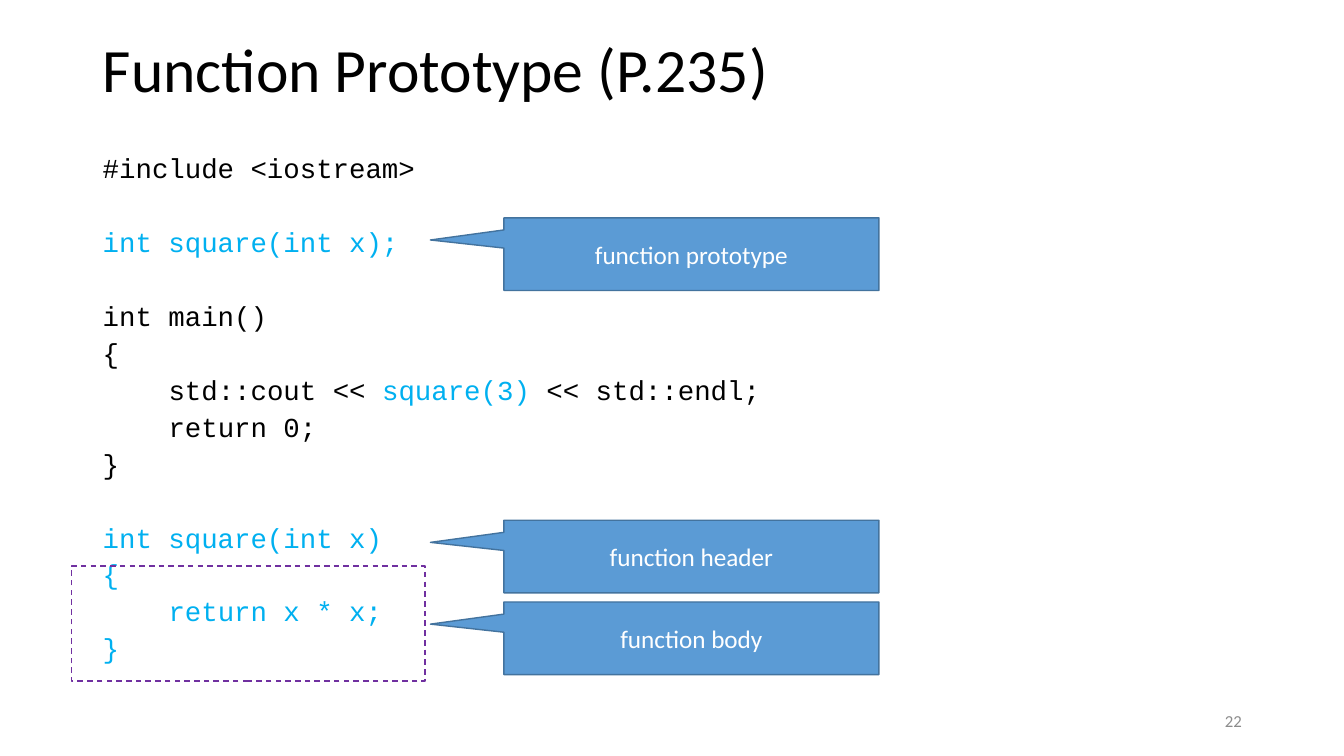
import pptx
import pptx.dml.color
import pptx.enum.dml
import pptx.enum.shapes
import pptx.enum.text
import pptx.util

Cm, Pt = pptx.util.Cm, pptx.util.Pt
ALIGN = pptx.enum.text.PP_ALIGN
ANCHOR = pptx.enum.text.MSO_ANCHOR
SHAPE = pptx.enum.shapes.MSO_SHAPE

COLORS = {
    "text": "000000",
    "highlight": "00B0F0",
    "callout": "5B9BD5",
    "callout_line": "43739E",
    "callout_text": "FFFFFF",
    "body_frame": "7030A0",
    "number": "8C8C8C",
}

CODE_SIZE = 19.6
CODE_INDENT = Pt(47)  # four monospaced characters
LINE_GAP = 5.2
BLOCK_GAP = 31.7  # line gap plus one empty line

# Each block holds lines of (indent level, [(text, color name), ...]).
CODE_BLOCKS = [
    [(0, [("#include <iostream>", "text")])],
    [(0, [("int square(int x);", "highlight")])],
    [
        (0, [("int main()", "text")]),
        (0, [("{", "text")]),
        (1, [("std::cout << ", "text"), ("square(3)", "highlight"),
             (" << std::endl;", "text")]),
        (1, [("return 0;", "text")]),
        (0, [("}", "text")]),
    ],
    [
        (0, [("int square(int x)", "highlight")]),
        (0, [("{", "highlight")]),
        (1, [("return x * x;", "highlight")]),
        (0, [("}", "highlight")]),
    ],
]

CALLOUTS = [
    ("function prototype", 5.49),
    ("function header", 13.11),
    ("function body", 15.17),
]


def rgb(name):
    return pptx.dml.color.RGBColor.from_string(COLORS[name])


def set_font(font, name, size, color=None):
    font.name = name
    font.size = Pt(size)
    if color:
        font.color.rgb = rgb(color)


def write_line(shape, text, size, color, alignment):
    """Fill a shape with one vertically centred line."""
    frame = shape.text_frame
    frame.word_wrap = True
    frame.vertical_anchor = ANCHOR.MIDDLE
    paragraph = frame.paragraphs[0]
    paragraph.text = text
    paragraph.alignment = alignment
    set_font(paragraph.font, "Calibri", size, color)
    return paragraph


def place_title(slide, left, top, width, height):
    title = slide.shapes.title
    title.left, title.top, title.width, title.height = left, top, width, height
    paragraph = write_line(title, "Function Prototype (P.235)", 44, "text", ALIGN.LEFT)
    paragraph.line_spacing = 0.9


def add_code(slide, left, top, width, height):
    frame = slide.shapes.add_textbox(left, top, width, height).text_frame
    frame.word_wrap = True
    paragraph = frame.paragraphs[0]
    for block_index, block in enumerate(CODE_BLOCKS):
        for line_index, (level, parts) in enumerate(block):
            if block_index or line_index:
                paragraph = frame.add_paragraph()
                paragraph.space_before = Pt(LINE_GAP if line_index else BLOCK_GAP)
            paragraph.line_spacing = 0.9
            set_font(paragraph.font, "Courier New", CODE_SIZE)
            if level:
                properties = paragraph._p.get_or_add_pPr()
                properties.set("marL", str(level * CODE_INDENT))
            for text, color in parts:
                run = paragraph.add_run()
                run.text = text
                run.font.color.rgb = rgb(color)


def add_callout(slide, text, left, top, width, height):
    callout = slide.shapes.add_shape(
        SHAPE.RECTANGULAR_CALLOUT, left, top, width, height)
    callout.adjustments[0] = -0.696
    callout.adjustments[1] = -0.195
    callout.shadow.inherit = False
    callout.fill.solid()
    callout.fill.fore_color.rgb = rgb("callout")
    callout.line.color.rgb = rgb("callout_line")
    callout.line.width = Pt(1)
    write_line(callout, text, 18, "callout_text", ALIGN.CENTER)


def add_body_frame(slide, left, top, width, height):
    """Outline the function body with dashes."""
    frame = slide.shapes.add_shape(SHAPE.RECTANGLE, left, top, width, height)
    frame.shadow.inherit = False
    frame.fill.background()
    frame.line.color.rgb = rgb("body_frame")
    frame.line.width = Pt(1)
    frame.line.dash_style = pptx.enum.dml.MSO_LINE.DASH


def add_slide_number(slide, left, top, width, height):
    box = slide.shapes.add_textbox(left, top, width, height)
    write_line(box, "22", 12, "number", ALIGN.RIGHT)


def build_prototype_slide(presentation):
    slide = presentation.slides.add_slide(presentation.slide_layouts[5])
    place_title(slide, Cm(2.34), Cm(0), Cm(29.21), Cm(3.68))
    add_code(slide, Cm(2.34), Cm(3.78), Cm(17.98), Cm(13.23))
    add_slide_number(slide, Cm(23.93), Cm(17.65), Cm(7.62), Cm(1.02))
    add_body_frame(slide, Cm(1.8), Cm(14.26), Cm(8.91), Cm(2.9))
    for text, top in CALLOUTS:
        add_callout(slide, text, Cm(12.7), Cm(top), Cm(9.45), Cm(1.83))


def main():
    presentation = pptx.Presentation()
    presentation.slide_width = Cm(33.87)
    presentation.slide_height = Cm(19.05)
    build_prototype_slide(presentation)
    presentation.save("out.pptx")


if __name__ == "__main__":
    main()
